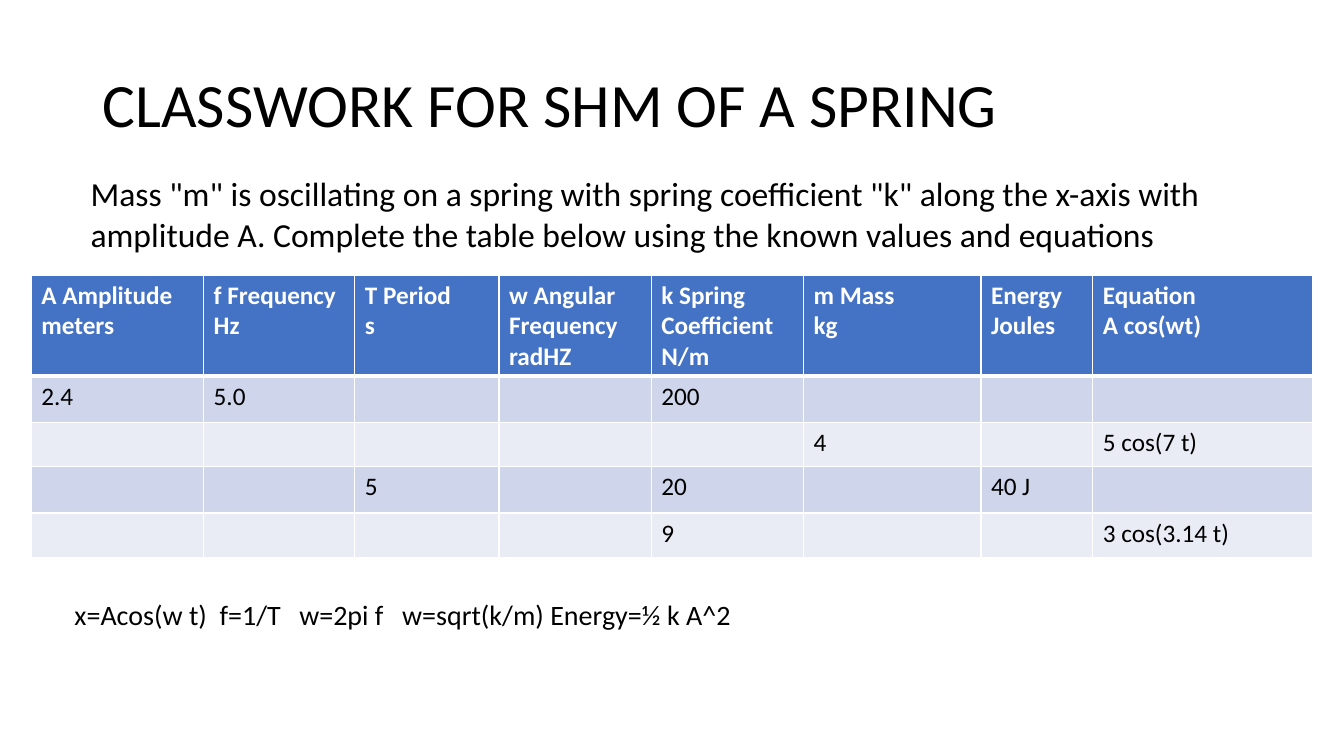
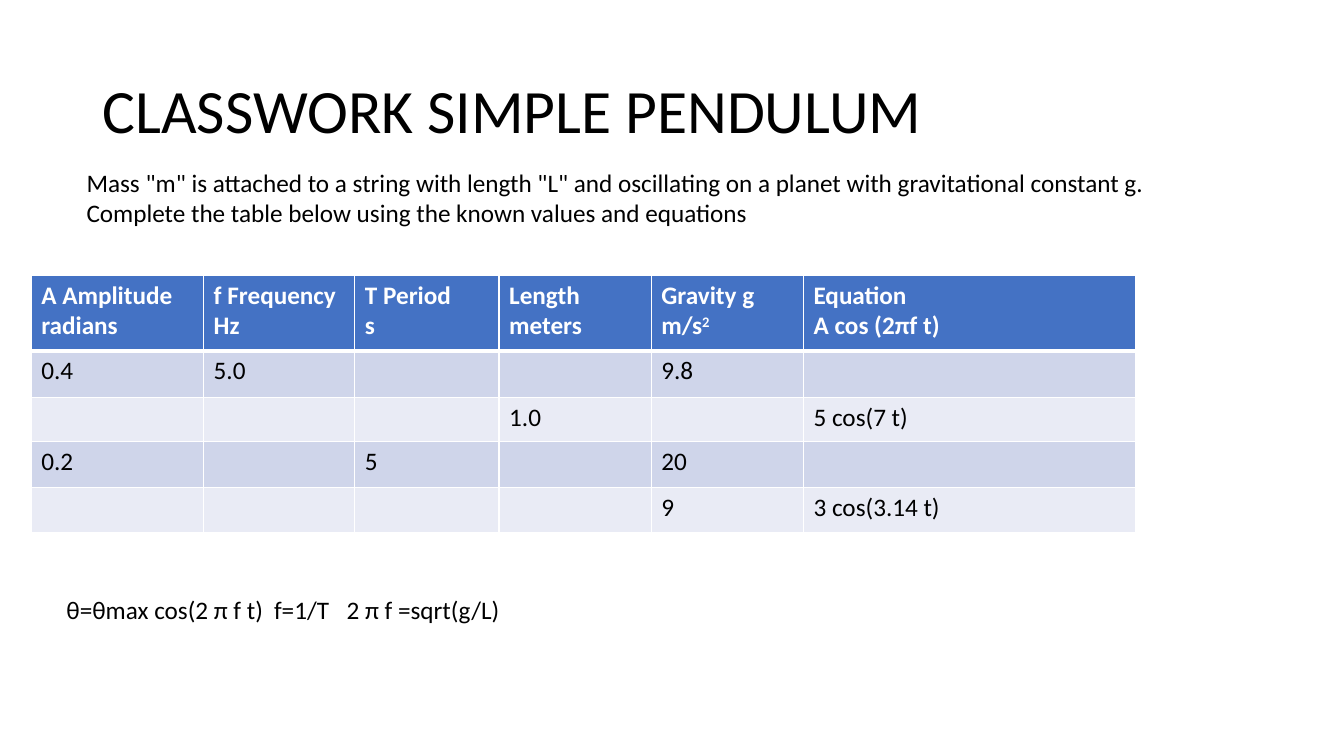
from dataclasses import dataclass

from lxml import etree
from pptx import Presentation
from pptx import util as u
from pptx.dml.color import RGBColor
from pptx.enum import text
from pptx.oxml import ns

PX = 9144


@dataclass(frozen=True)
class Theme:
    font: str = "Calibri"
    ink: str = "000000"
    paper: str = "FFFFFF"
    header: str = "4472C4"
    bands: tuple = ("CFD5EA", "E9EBF5")
    title_size: int = 44
    lead_size: int = 24
    formula_size: int = 20
    body_size: int = 18
    grid_line: int = 1
    header_line: int = 3


THEME = Theme()
ROW_HEIGHTS = (46, 44, 46, 44)
SHARED_COLUMNS = (171, 150, 143, 151, 151)


def px(length):
    return u.Emu(length * PX)


def style_runs(frame, size, color, bold=False):
    for paragraph in frame.paragraphs:
        for run in paragraph.runs:
            run.font.name = THEME.font
            run.font.size = u.Pt(size)
            run.font.bold = bold
            run.font.color.rgb = RGBColor.from_string(color)


def add_text(slide, area, words, size):
    frame = slide.shapes.add_textbox(*map(px, area)).text_frame
    frame.word_wrap = True
    frame.text = words
    style_runs(frame, size, THEME.ink)
    return frame


def add_title(slide, words, height):
    frame = add_text(slide, (92, 40, 1150, height), words, THEME.title_size)
    frame.vertical_anchor = text.MSO_ANCHOR.MIDDLE
    frame.paragraphs[0].line_spacing = 0.9


def add_formulas(slide, area, formulas, stops, size):
    frame = add_text(slide, area, "\t".join(formulas), size)
    properties = frame.paragraphs[0]._p.get_or_add_pPr()
    tabs = etree.SubElement(properties, ns.qn("a:tabLst"))
    for stop in stops:
        etree.SubElement(tabs, ns.qn("a:tab"), pos=str(px(stop)), algn="l")


def set_borders(cell, top, bottom):
    properties = cell._tc.get_or_add_tcPr()
    widths = {"L": THEME.grid_line, "R": THEME.grid_line, "T": top, "B": bottom}
    for side, width in widths.items():
        line = etree.SubElement(properties, ns.qn(f"a:ln{side}"), w=str(u.Pt(width)))
        fill = etree.SubElement(line, ns.qn("a:solidFill"))
        etree.SubElement(fill, ns.qn("a:srgbClr"), val=THEME.paper)


def raise_exponents(frame):
    for paragraph in frame.paragraphs:
        base, mark, exponent = paragraph.text.partition("^")
        if mark:
            paragraph.text = base
            raised = paragraph.add_run()
            raised.text = exponent
            raised.font._element.set("baseline", "30000")


def fill_cell(cell, words, row):
    is_header = row == 0
    set_borders(
        cell,
        THEME.header_line if row == 1 else THEME.grid_line,
        THEME.header_line if is_header else THEME.grid_line,
    )
    cell.fill.solid()
    background = THEME.header if is_header else THEME.bands[(row - 1) % 2]
    cell.fill.fore_color.rgb = RGBColor.from_string(background)
    cell.text_frame.text = words
    if is_header:
        raise_exponents(cell.text_frame)
    style_runs(cell.text_frame, THEME.body_size, THEME.paper if is_header else THEME.ink, is_header)


def add_worksheet(slide, headings, known_values, extra_columns, header_height):
    widths = SHARED_COLUMNS + extra_columns
    heights = (header_height,) + ROW_HEIGHTS
    worksheet = slide.shapes.add_table(
        len(heights), len(widths), px(31), px(273), px(sum(widths)), px(sum(heights))
    ).table
    worksheet.horz_banding = False
    for column, width in zip(worksheet.columns, widths):
        column.width = px(width)
    for row, height in zip(worksheet.rows, heights):
        row.height = px(height)
    for row, entries in enumerate([headings] + known_values):
        for column, words in enumerate(entries):
            fill_cell(worksheet.cell(row, column), words, row)


def build_spring(slide):
    add_title(slide, "CLASSWORK FOR SHM OF A SPRING", 133)
    add_text(
        slide,
        (80, 167, 1141, 91),
        'Mass "m" is oscillating on a spring with spring coefficient "k" along the x-axis '
        "with amplitude A. Complete the table below using the known values and equations",
        THEME.lead_size,
    )
    add_formulas(
        slide,
        (64, 588, 974, 44),
        ["x=Acos(w t)", "f=1/T", "w=2pi f", "w=sqrt(k/m) Energy=½ k A^2"],
        (144, 223, 325),
        THEME.formula_size,
    )
    add_worksheet(
        slide,
        ["A Amplitude\nmeters", "f Frequency\nHz", "T Period\ns", "w Angular\nFrequency\nradHZ",
         "k Spring Coefficient N/m", "m Mass\nkg", "Energy\nJoules", "Equation\nA cos(wt)"],
        [
            ["2.4", "5.0", "", "", "200", "", "", ""],
            ["", "", "", "", "", "4", "", "5 cos(7 t)"],
            ["", "", "5", "", "20", "", "40 J", ""],
            ["", "", "", "", "9", "", "", "3 cos(3.14 t)"],
        ],
        (176, 111, 218),
        100,
    )


def build_pendulum(slide):
    add_title(slide, "CLASSWORK SIMPLE PENDULUM", 145)
    add_text(
        slide,
        (76, 161, 1119, 71),
        'Mass "m" is attached to a string with length "L" and oscillating on a planet with '
        "gravitational constant g. Complete the table below using the known values and equations",
        THEME.body_size,
    )
    add_worksheet(
        slide,
        ["A Amplitude\nradians", "f Frequency\nHz", "T Period\ns", "Length\nmeters",
         "Gravity g\nm/s^2", "Equation\nA cos (2πf t)"],
        [
            ["0.4", "5.0", "", "", "9.8", ""],
            ["", "", "", "1.0", "", "5 cos(7 t)"],
            ["0.2", "", "5", "", "20", ""],
            ["", "", "", "", "9", "3 cos(3.14 t)"],
        ],
        (329,),
        75,
    )
    add_formulas(
        slide,
        (56, 585, 1135, 71),
        ["θ=θmax cos(2 π f t)", "f=1/T", "2 π f =sqrt(g/L)"],
        (206, 278),
        THEME.body_size,
    )


def main():
    deck = Presentation()
    deck.slide_width, deck.slide_height = px(1333), px(750)
    for build in (build_spring, build_pendulum):
        build(deck.slides.add_slide(deck.slide_layouts[6]))
    deck.save("out.pptx")


if __name__ == "__main__":
    main()
